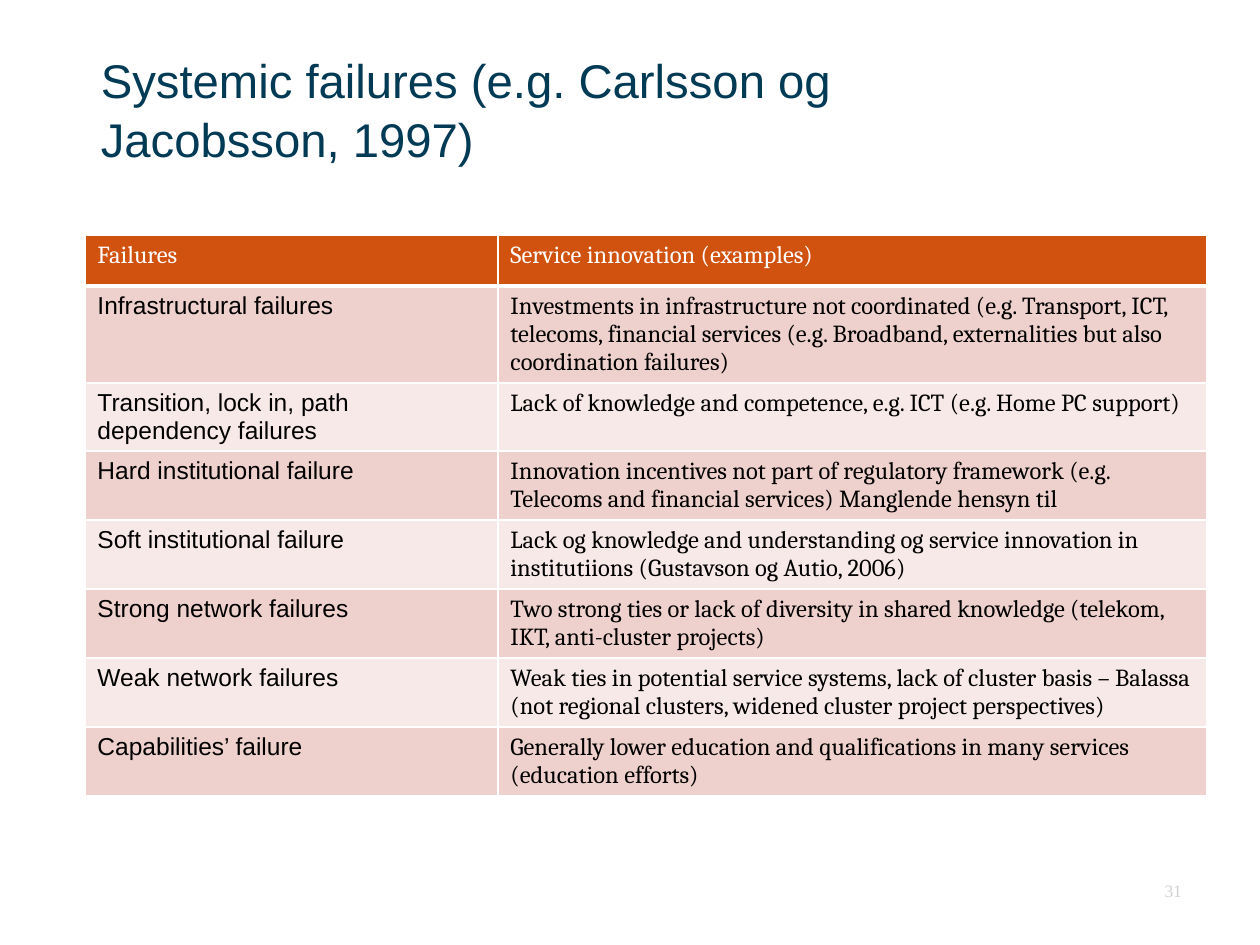
from lxml import etree
from pptx import Presentation
from pptx.dml.color import RGBColor
from pptx.enum.text import MSO_ANCHOR, MSO_AUTO_SIZE, PP_ALIGN
from pptx.oxml.ns import qn
from pptx.util import Pt

LEFT, RIGHT = PP_ALIGN.LEFT, PP_ALIGN.RIGHT
TOP, BOTTOM = MSO_ANCHOR.TOP, MSO_ANCHOR.BOTTOM
NO_AUTOFIT = MSO_AUTO_SIZE.NONE

NAVY = RGBColor(0x00, 0x3A, 0x54)
GREY = RGBColor(0xD0, 0xD1, 0xD3)
ORANGE = RGBColor(0xD1, 0x52, 0x0F)
ROSE = RGBColor(0xEE, 0xD1, 0xCC)
PALE_ROSE = RGBColor(0xF7, 0xE9, 0xE7)
BLACK = RGBColor(0, 0, 0)
WHITE = RGBColor(255, 255, 255)

# Content
TITLE = "Systemic failures (e.g. Carlsson og Jacobsson, 1997)"
SLIDE_NUMBER = "31"
ROWS = [
    ("Failures", "Service innovation (examples)"),
    ("Infrastructural failures",
     "Investments in infrastructure not coordinated (e.g. Transport, ICT, telecoms, "
     "financial services (e.g. Broadband, externalities but also coordination failures)"),
    ("Transition, lock in, path dependency failures",
     "Lack of knowledge and competence, e.g. ICT (e.g. Home PC support)"),
    ("Hard institutional failure",
     "Innovation incentives not part of regulatory framework (e.g. Telecoms and "
     "financial services) Manglende hensyn til"),
    ("Soft institutional failure",
     "Lack og knowledge and understanding og service innovation in institutiions "
     "(Gustavson og Autio, 2006)"),
    ("Strong network failures",
     "Two strong ties or lack of diversity in shared knowledge (telekom, IKT, "
     "anti-cluster projects)"),
    ("Weak network failures",
     "Weak ties in potential service systems, lack of cluster basis – Balassa "
     "(not regional clusters, widened cluster project perspectives)"),
    ("Capabilities’ failure",
     "Generally lower education and qualifications in many services (education efforts)"),
]

# Layout and formats
TITLE_BOX = (57.6, 30.2, 556.6, 65.5)
NUMBER_BOX = (625.7, 502.6, 49.7, 28.8)
TABLE_LEFT, TABLE_TOP, ROW_HEIGHT = 48.5, 134.2, 29.2
COLUMN_WIDTHS = (236, 405.3)
TITLE_FONT = {"name": "Arial", "size": Pt(27), "color": NAVY}
NUMBER_FONT = {"name": "Times New Roman", "size": Pt(10), "color": GREY}
HEADER_FONT = {"name": "Cambria", "size": Pt(14), "color": WHITE}
BODY_FONTS = [{"name": name, "size": Pt(14), "color": BLACK} for name in ("Arial", "Cambria")]


def write(text_frame, text, font_format, alignment=LEFT):
    paragraph = text_frame.paragraphs[0]
    paragraph.alignment = alignment
    run = paragraph.add_run()
    run.text = text
    for attribute, value in font_format.items():
        if attribute == "color":
            run.font.color.rgb = value
        else:
            setattr(run.font, attribute, value)
    return paragraph


def fill_box(shape, box, text, font_format, alignment, anchor):
    shape.left, shape.top, shape.width, shape.height = map(Pt, box)
    frame_format = {"margin_left": 0, "margin_top": 0, "margin_right": 0, "margin_bottom": 0,
                    "word_wrap": True, "auto_size": NO_AUTOFIT, "vertical_anchor": anchor}
    for attribute, value in frame_format.items():
        setattr(shape.text_frame, attribute, value)
    return write(shape.text_frame, text, font_format, alignment)


def set_borders(cell, color, bottom_width):
    properties = cell._tc.get_or_add_tcPr()
    widths = {"a:lnL": 1, "a:lnR": 1, "a:lnT": 1, "a:lnB": bottom_width}
    for position, (tag, width) in enumerate(widths.items()):
        line = etree.Element(qn(tag), w=str(Pt(width)))
        fill = etree.SubElement(line, qn("a:solidFill"))
        etree.SubElement(fill, qn("a:srgbClr"), val=str(color))
        properties.insert(position, line)


def add_failures_table(slide):
    frame = slide.shapes.add_table(
        len(ROWS), len(COLUMN_WIDTHS), Pt(TABLE_LEFT), Pt(TABLE_TOP),
        Pt(sum(COLUMN_WIDTHS)), Pt(ROW_HEIGHT * len(ROWS)))
    table = frame.table
    for column, width in zip(table.columns, COLUMN_WIDTHS):
        column.width = Pt(width)
    for row_index, texts in enumerate(ROWS):
        is_header = row_index == 0
        table.rows[row_index].height = Pt(ROW_HEIGHT)
        band = ORANGE if is_header else ROSE if row_index % 2 else PALE_ROSE
        for column_index, text in enumerate(texts):
            cell = table.cell(row_index, column_index)
            cell.fill.solid()
            cell.fill.fore_color.rgb = band
            set_borders(cell, WHITE, 3 if is_header else 1)
            font_format = HEADER_FONT if is_header else BODY_FONTS[column_index]
            run_font = write(cell.text_frame, text, font_format).runs[0].font
            run_font.bold = False


def main():
    presentation = Presentation()
    presentation.slide_width, presentation.slide_height = Pt(720), Pt(540)
    slide = presentation.slides.add_slide(presentation.slide_layouts[5])

    # Title
    title = fill_box(slide.shapes.title, TITLE_BOX, TITLE, TITLE_FONT, LEFT, BOTTOM)
    title.line_spacing = 1.05

    # Slide number
    number_box = slide.shapes.add_textbox(0, 0, 0, 0)
    fill_box(number_box, NUMBER_BOX, SLIDE_NUMBER, NUMBER_FONT, RIGHT, TOP)

    # Table
    add_failures_table(slide)
    presentation.save("out.pptx")


if __name__ == "__main__":
    main()
